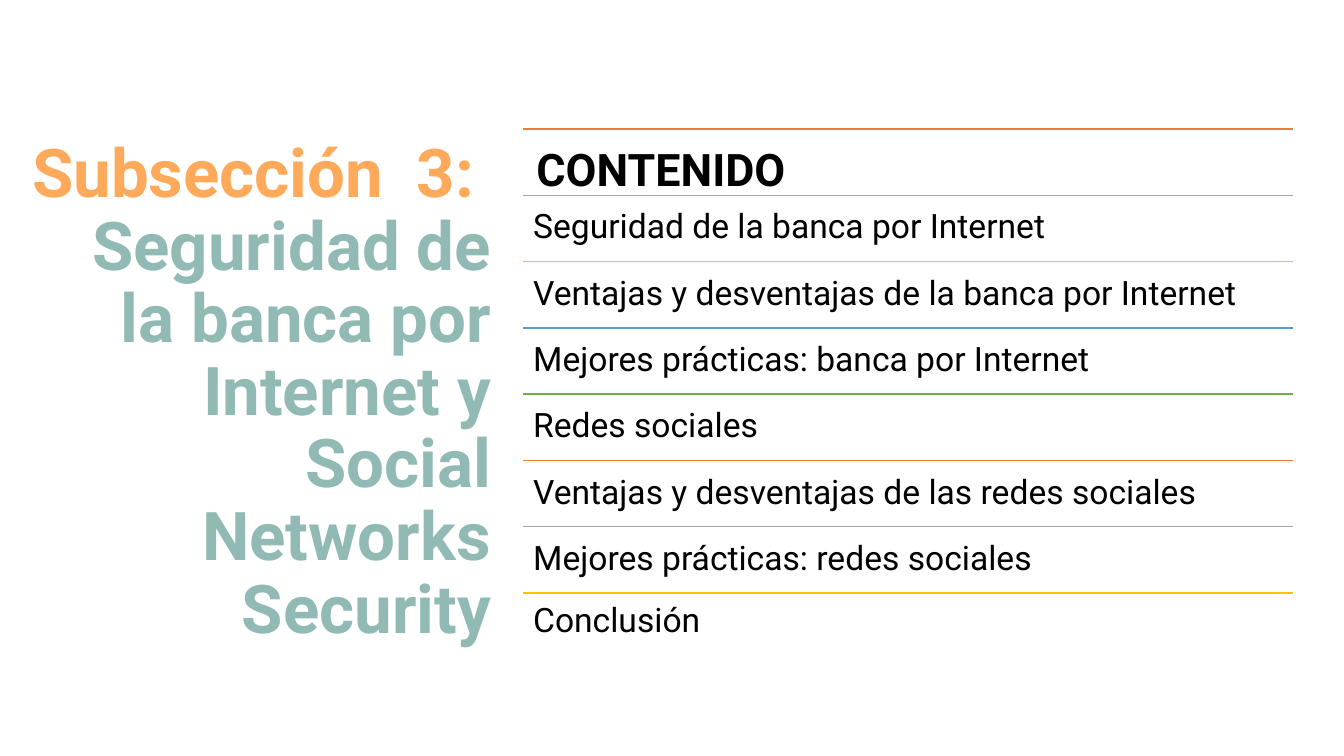
from lxml.etree import SubElement
from pptx import Presentation
from pptx.dml.color import RGBColor
from pptx.enum.shapes import MSO_CONNECTOR
from pptx.enum.text import MSO_ANCHOR, PP_ALIGN
from pptx.oxml.ns import qn
from pptx.util import Inches, Pt

FONT = "Roboto"
TITLE = [
    ("Subsección  3: ", "FFAA5A"),
    ("Seguridad de la banca por Internet y Social Networks Security", "92BAB5"),
]
HEADING = "CONTENIDO"
TOPICS = [
    "Seguridad de la banca por Internet",
    "Ventajas y desventajas de la banca por Internet",
    "Mejores prácticas: banca por Internet",
    "Redes sociales",
    "Ventajas y desventajas de las redes sociales",
    "Mejores prácticas: redes sociales",
    "Conclusión",
]
RULE_COLORS = ["ED7D31", "A5A5A5", "FFC000", "5B9BD5", "70AD47"]

TITLE_BOX = (0.18, 0.85, 4.79, 6.11)
LIST_LEFT, LIST_TOP, LIST_WIDTH, LIST_HEIGHT = 5.19, 1.28, 7.63, 5.26


def rgb(color):
    return RGBColor.from_string(color)


def add_text(slide, box, inset):
    """Add a wrapping text box and return its frame."""
    frame = slide.shapes.add_textbox(*map(Inches, box)).text_frame
    frame.word_wrap = True
    frame.margin_left = frame.margin_right = Inches(inset)
    frame.margin_top = frame.margin_bottom = Inches(inset)
    return frame


def style(paragraph, size, bold=False):
    paragraph.font.name = FONT
    paragraph.font.size = Pt(size)
    paragraph.font.bold = bold


def add_title(slide):
    frame = add_text(slide, TITLE_BOX, 0.1)
    frame.margin_top = frame.margin_bottom = Inches(0.05)
    frame.vertical_anchor = MSO_ANCHOR.MIDDLE
    title = frame.paragraphs[0]
    title.alignment = PP_ALIGN.RIGHT
    title.line_spacing = 0.9
    style(title, 48, bold=True)
    for index, (words, color) in enumerate(TITLE):
        if index:
            title.add_line_break()
        part = title.add_run()
        part.text = words
        part.font.color.rgb = rgb(color)


def add_rule(slide, top, color):
    rule = slide.shapes.add_connector(
        MSO_CONNECTOR.STRAIGHT, Inches(LIST_LEFT), Inches(top),
        Inches(LIST_LEFT + LIST_WIDTH), Inches(top))
    rule.line.color.rgb = rgb(color)
    rule.line.width = Pt(1)
    SubElement(rule._element.spPr, qn("a:effectLst"))


def add_contents(slide):
    entries = [HEADING] + TOPICS
    row_height = LIST_HEIGHT / len(entries)
    for row, words in enumerate(entries):
        top = LIST_TOP + row * row_height
        is_heading = row == 0
        add_rule(slide, top, RULE_COLORS[row % len(RULE_COLORS)])
        frame = add_text(slide, (LIST_LEFT, top, LIST_WIDTH, row_height),
                         0.13 if is_heading else 0.1)
        entry = frame.paragraphs[0]
        entry.text = words
        style(entry, 32 if is_heading else 24, bold=is_heading)
        entry.font.color.rgb = rgb("000000")
        if row == len(entries) - 1:
            entry.line_spacing = 0.9


def main():
    deck = Presentation()
    deck.slide_width, deck.slide_height = Inches(13.33), Inches(7.5)
    slide = deck.slides.add_slide(deck.slide_layouts[6])
    add_title(slide)
    add_contents(slide)
    deck.save("out.pptx")


if __name__ == "__main__":
    main()
